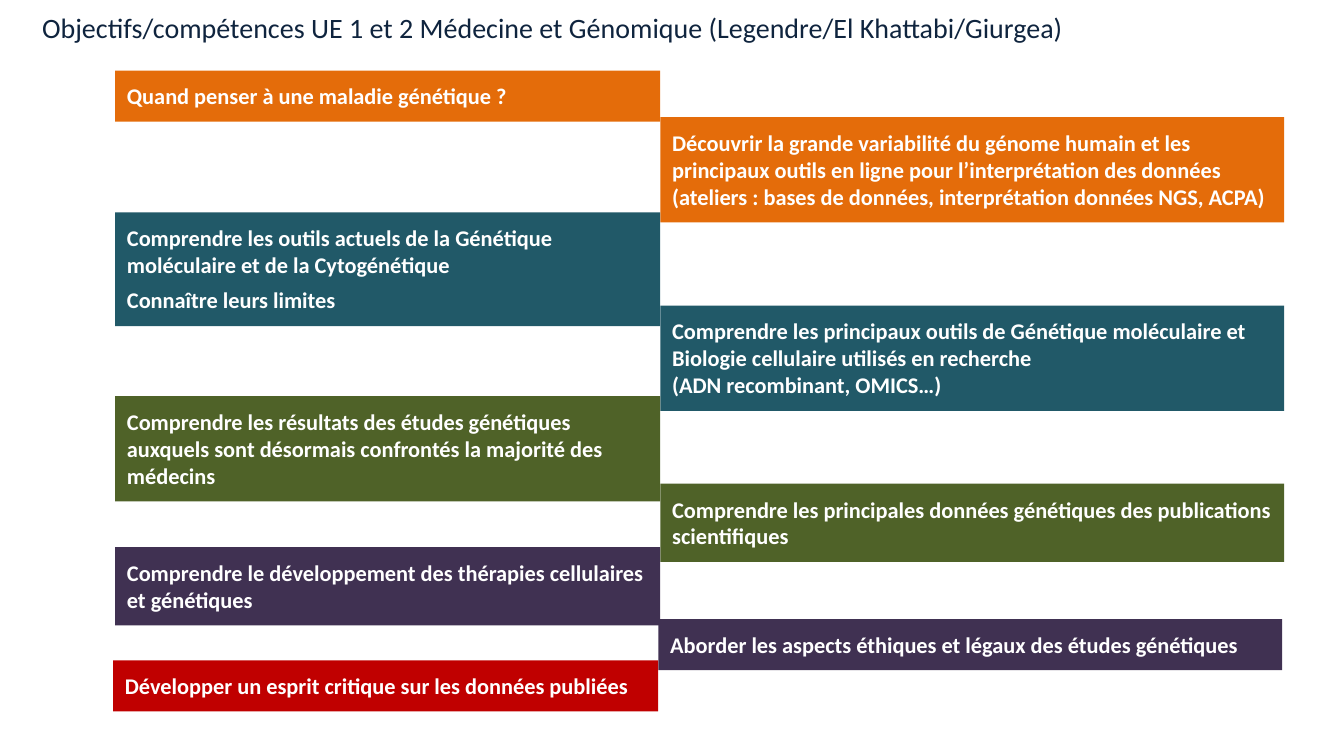
from dataclasses import dataclass

from pptx import Presentation
from pptx import util as u
from pptx.dml.color import RGBColor
from pptx.enum import shapes, text

ORANGE, TEAL, GREEN, PURPLE, RED = "E46C0A", "215968", "4F6228", "403152", "C00000"
WHITE, NAVY = "FFFFFF", "0F243E"
FONT = "Calibri"
LEFT, RIGHT = 2.9, 16.64
LEFT_WIDTH, RIGHT_WIDTH = 13.74, 15.72
SHIFT = 0.05
INSET = 0.3
LINE_HEIGHT = 0.685


@dataclass
class Objective:
    left: float
    top: float
    width: float
    lines: int
    color: str
    paragraphs: tuple[str, ...]
    gap: float = 0

    @property
    def height(self) -> float:
        return 2 * INSET + self.lines * LINE_HEIGHT + u.Pt(self.gap).cm


OBJECTIVES = [
    Objective(LEFT, 1.78, LEFT_WIDTH, 1, ORANGE,
              ("Quand penser à une maladie génétique ?",)),
    Objective(RIGHT, 2.95, RIGHT_WIDTH, 3, ORANGE,
              ("Découvrir la grande variabilité du génome humain et les principaux "
               "outils en ligne pour l’interprétation des données",
               "(ateliers : bases de données, interprétation données NGS, ACPA)")),
    Objective(LEFT, 5.35, LEFT_WIDTH, 3, TEAL,
              ("Comprendre les outils actuels de la Génétique moléculaire et de la "
               "Cytogénétique",
               "Connaître leurs limites"), gap=6),
    Objective(RIGHT, 7.7, RIGHT_WIDTH, 3, TEAL,
              ("Comprendre les principaux outils de Génétique moléculaire et "
               "Biologie cellulaire utilisés en recherche",
               "(ADN recombinant, OMICS…)")),
    Objective(LEFT, 9.98, LEFT_WIDTH, 3, GREEN,
              ("Comprendre les résultats des études génétiques auxquels sont "
               "désormais confrontés la majorité des médecins",)),
    Objective(RIGHT, 12.19, RIGHT_WIDTH, 2, GREEN,
              ("Comprendre les principales données génétiques des publications "
               "scientifiques",)),
    Objective(LEFT, 13.79, LEFT_WIDTH, 2, PURPLE,
              ("Comprendre le développement des thérapies cellulaires et génétiques",)),
    Objective(RIGHT - SHIFT, 15.6, RIGHT_WIDTH, 1, PURPLE,
              ("Aborder les aspects éthiques et légaux des études génétiques",)),
    Objective(LEFT - SHIFT, 16.64, LEFT_WIDTH, 1, RED,
              ("Développer un esprit critique sur les données publiées",)),
]


def rgb(value: str) -> RGBColor:
    return RGBColor.from_string(value)


def write(tf, paragraphs: tuple[str, ...], size: float, color: str,
          bold: bool = False, gap: float = 0) -> None:
    tf.word_wrap = True
    tf.vertical_anchor = text.MSO_ANCHOR.TOP
    for i, line in enumerate(paragraphs):
        p = tf.paragraphs[0] if i == 0 else tf.add_paragraph()
        p.text = line
        p.alignment = text.PP_ALIGN.LEFT
        p.space_before = u.Pt(gap if i else 0)
        p.font.name = FONT
        p.font.size = u.Pt(size)
        p.font.bold = bold
        p.font.color.rgb = rgb(color)


def draw_title(s, title: str) -> None:
    sp = s.shapes.add_textbox(u.Cm(0.81), u.Cm(0.15), u.Cm(30.76), u.Cm(1.11))
    write(sp.text_frame, (title,), 20, NAVY)


def draw_objective(s, box: Objective) -> None:
    sp = s.shapes.add_shape(shapes.MSO_SHAPE.RECTANGLE, u.Cm(box.left),
                            u.Cm(box.top), u.Cm(box.width), u.Cm(box.height))
    sp.shadow.inherit = False
    sp.fill.solid()
    sp.fill.fore_color.rgb = rgb(box.color)
    sp.line.fill.background()
    tf = sp.text_frame
    tf.margin_left = tf.margin_right = u.Cm(INSET)
    tf.margin_top = tf.margin_bottom = u.Cm(INSET)
    write(tf, box.paragraphs, 16, WHITE, bold=True, gap=box.gap)


def main() -> None:
    prs = Presentation()
    prs.slide_width, prs.slide_height = u.Cm(33.87), u.Cm(19.05)
    s = prs.slides.add_slide(prs.slide_layouts[6])
    draw_title(s, "Objectifs/compétences UE 1 et 2 Médecine et Génomique "
                  "(Legendre/El Khattabi/Giurgea)")
    for box in OBJECTIVES:
        draw_objective(s, box)
    prs.save("out.pptx")


if __name__ == "__main__":
    main()
